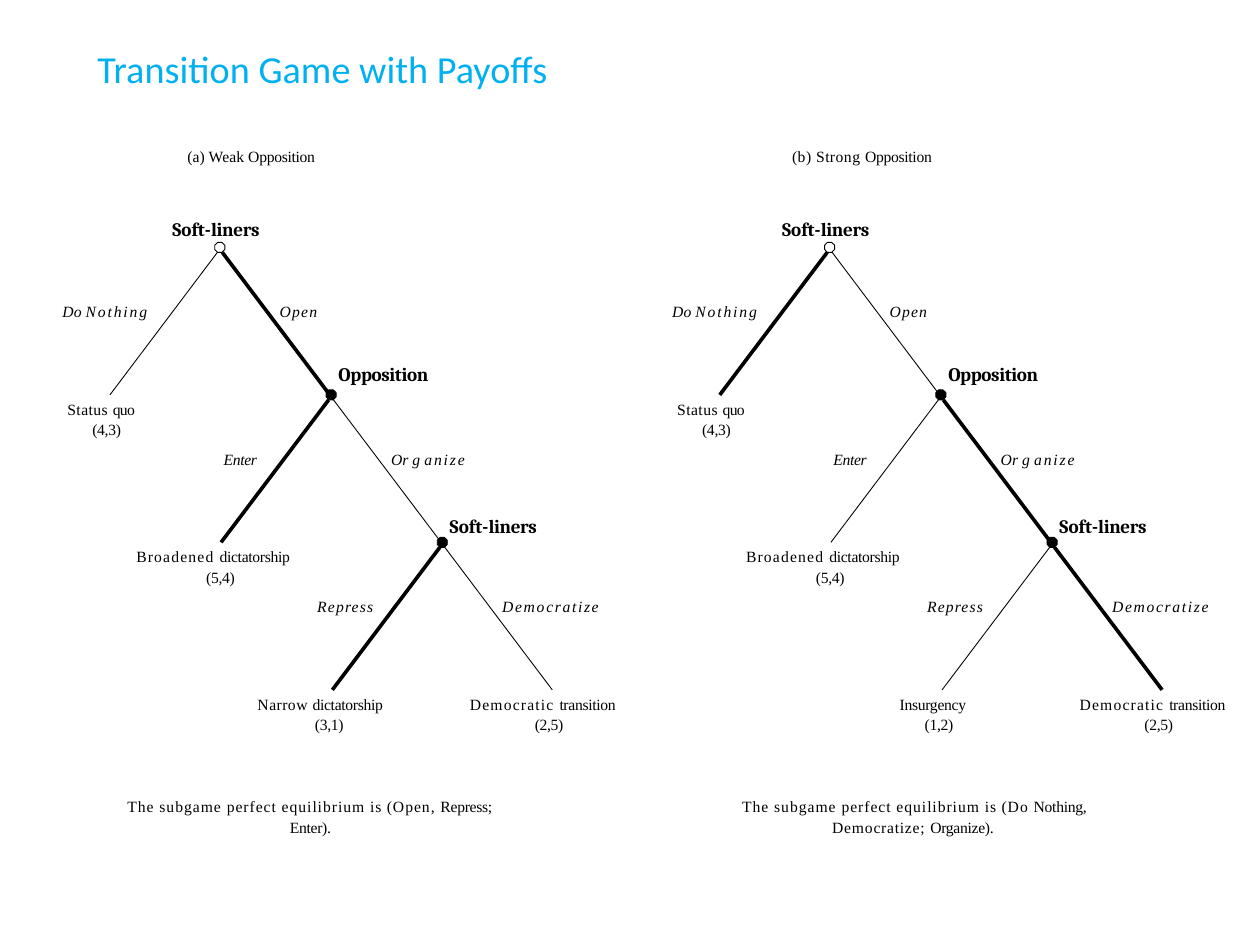
from collections import namedtuple
from dataclasses import dataclass

from lxml.etree import SubElement
from pptx import Presentation
from pptx.dml.color import RGBColor
from pptx.enum.shapes import MSO_CONNECTOR as Connector, MSO_SHAPE as Shape
from pptx.enum.text import MSO_ANCHOR as Anchor, MSO_AUTO_SIZE as AutoSize, PP_ALIGN as Align
from pptx.oxml.ns import qn
from pptx.util import Inches, Pt


@dataclass(frozen=True)
class Theme:
    ink: RGBColor = RGBColor(0, 0, 0)
    accent: RGBColor = RGBColor(0x00, 0xB0, 0xF0)
    thin: float = 0.25
    thick: float = 1.06


THEME = Theme()

# Text roles: font values, colour, space before (pt), line spacing
Role = namedtuple("Role", "font color before spacing")
SERIF = {"name": "Times New Roman", "size": Pt(4.5), "bold": False}
TITLE = Role({"name": "Calibri", "size": Pt(11), "bold": False}, THEME.accent, 0.9, 1)
CAPTION = Role(SERIF, THEME.ink, 1.1, 1)
ACTION = Role({**SERIF, "italic": True}, THEME.ink, 1.1, 1)
PLAYER = Role({"name": "Cambria", "size": Pt(5.5), "bold": True}, THEME.ink, 1, 1)
OUTCOME = Role(SERIF, THEME.ink, 0.9, 1.11)

# Slide size in points, then the grid in inches:
# each decision sits one column right and one row below the last
SLIDE_W, SLIDE_H = 363, 272.5
ROOT_X, ROOT_Y, LAST_X = 0.88, 0.99, 1.77
COL, ROW = (LAST_X - ROOT_X) / 2, 0.59
REACH = 0.44
PANEL_STEP = 2.44
NODE = 0.04
LABEL_GAP, LABEL_DROP, LABEL_H = 0.23, 0.21, 0.1
PLAYER_H, OUTCOME_H = 0.12, 0.19

# Wording holds (text, letter spacing in pt) runs;
# lead is the distance from a branch end back to the left of its outcome
Label = namedtuple("Label", "runs width")
Outcome = namedtuple("Outcome", "runs width lead hang")
Move = namedtuple("Move", "action outcome")
Decision = namedtuple("Decision", "player shift rise left right")
Panel = namedtuple("Panel", "heading heading_x best ending ending_box")

SOFT_LINERS = Label([("Soft-", 0), ("liners", -0.1)], 0.4)
OPPOSITION = Label([("Opposition", -0.1)], 0.43)
STATUS_QUO = Outcome([("Status ", 0.1), ("quo ", -0.2), ("(4,3)", -0.1)], 0.33, 0.18, 0.1)
BROADENED = Outcome([("Broadened ", 0.3), ("dictatorship (5,4)", -0.1)], 0.71, 0.35, 0.28)
NARROW = Outcome([("Narrow ", 0.1), ("dictatorship (3,1)", -0.1)], 0.61, 0.31, 0.23)
INSURGENCY = Outcome([("Insurgency (1,2)", -0.1)], 0.35, 0.18, 0.1)
TRANSITION = Outcome([("Democratic ", 0.3), ("transition (2,5)", -0.1)], 0.66, 0.34, 0.26)


def game(repression):
    """Decisions in order of play; a move without outcome leads to the next one."""
    return [
        Decision(SOFT_LINERS, -0.2, 0.13,
                 Move(Label([("Do ", 0), ("Nothing", 0.5)], 0.4), STATUS_QUO),
                 Move(Label([("Open", 0.3)], 0.2), None)),
        Decision(OPPOSITION, 0.02, 0.14,
                 Move(Label([("Enter", -0.1)], 0.2), BROADENED),
                 Move(Label([("Or g ", 0), ("anize", 0.5)], 0.33), None)),
        Decision(SOFT_LINERS, 0.02, 0.12,
                 Move(Label([("Repress", 0.3)], 0.27), repression),
                 Move(Label([("Democratize", 0.45)], 0.44), TRANSITION)),
    ]


EQUILIBRIUM = [("The subgame perfect equilibrium ", 0.25), ("is ", 0.2)]
# best lists the equilibrium side of each decision: -1 left, 1 right
PANELS = [
    (Panel(Label([("(a) Weak ", 0), ("Opposition", -0.1)], 0.61), 0.74, (1, -1, -1),
           EQUILIBRIUM + [("(Open, ", 0.25), ("Repress; Enter).", -0.1)],
           (0.5, 1.52, 0.65)), NARROW),
    (Panel(Label([("(b) Strong ", 0.1), ("Opposition", -0.1)], 0.65), 0.72, (-1, 1, 1),
           EQUILIBRIUM + [("(Do ", 0.25), ("Nothing, ", -0.1),
                          ("Democratize; ", 0.2), ("Organize).", -0.1)],
           (0.52, 1.44, 0.36)), INSURGENCY),
]


def apply(target, formats):
    for name, value in formats.items():
        setattr(target, name, value)


def write(holder, runs, role, hang=0):
    frame = holder.text_frame
    apply(frame, {"word_wrap": True, "auto_size": AutoSize.SHAPE_TO_FIT_TEXT,
                  "vertical_anchor": Anchor.TOP, "margin_left": 0,
                  "margin_top": Inches(0.01), "margin_right": 0, "margin_bottom": 0})
    paragraph = frame.paragraphs[0]
    apply(paragraph, {"alignment": Align.LEFT, "space_before": Pt(role.before),
                      "line_spacing": role.spacing})
    indents = paragraph._p.get_or_add_pPr()
    indents.set("marL", str(Inches(hang + 0.01)))
    indents.set("indent", str(-Inches(hang)))
    for text, tracking in runs:
        run = paragraph.add_run()
        run.text = text
        apply(run.font, role.font)
        run.font.color.rgb = role.color
        run._r.get_or_add_rPr().set("spc", str(round(tracking * 100)))


def add_text(slide, box, runs, role, hang=0):
    write(slide.shapes.add_textbox(*map(Inches, box)), runs, role, hang)


def add_branch(slide, start, end, width):
    branch = slide.shapes.add_connector(Connector.STRAIGHT, *map(Inches, start + end))
    branch.line.color.rgb = THEME.ink
    branch.line.width = Pt(width)
    SubElement(branch._element.spPr, qn("a:effectLst"))


def add_node(slide, x, y, filled):
    node = slide.shapes.add_shape(
        Shape.OCTAGON, *map(Inches, (x - NODE / 2, y - NODE / 2, NODE, NODE)))
    node.shadow.inherit = False
    if filled:
        node.fill.solid()
        node.fill.fore_color.rgb = THEME.ink
    else:
        node.fill.background()
    node.line.color.rgb = THEME.ink
    node.line.width = Pt(THEME.thin)


def add_decision(slide, x, y, decision, best, filled):
    """One node with its player, its two branches and their outcomes."""
    add_node(slide, x, y, filled)
    player = decision.player
    add_text(slide, (x + decision.shift, y - decision.rise, player.width, PLAYER_H),
             player.runs, PLAYER)
    for side, move in ((-1, decision.left), (1, decision.right)):
        end_x, end_y = x + side * REACH, y + ROW
        add_branch(slide, (x + side * 0.01, y + NODE / 2), (end_x, end_y),
                   THEME.thick if side == best else THEME.thin)
        action = move.action
        label_x = x + LABEL_GAP if side > 0 else x - LABEL_GAP - 0.01 - action.width
        add_text(slide, (label_x, y + LABEL_DROP, action.width, LABEL_H), action.runs, ACTION)
        if move.outcome:
            outcome = move.outcome
            add_text(slide, (end_x - outcome.lead, end_y, outcome.width, OUTCOME_H),
                     outcome.runs, OUTCOME, outcome.hang)


def add_panel(slide, left, panel, repression):
    """A heading, a game tree and its equilibrium, placed from the panel's left."""
    heading = panel.heading
    add_text(slide, (left + panel.heading_x, 0.58, heading.width, LABEL_H),
             heading.runs, CAPTION)
    for step, (decision, best) in enumerate(zip(game(repression), panel.best)):
        add_decision(slide, left + ROOT_X + step * COL, ROOT_Y + step * ROW,
                     decision, best, filled=step > 0)
    ending_x, width, hang = panel.ending_box
    add_text(slide, (left + ending_x, 3.17, width, OUTCOME_H), panel.ending, OUTCOME, hang)


def add_title(slide, box):
    title = slide.shapes.title
    apply(title, dict(zip(("left", "top", "width", "height"), map(Inches, box))))
    write(title, [("Transition Game with Payoffs", 0)], TITLE)


def main():
    deck = Presentation()
    deck.slide_width = Pt(SLIDE_W)
    deck.slide_height = Pt(SLIDE_H)
    slide = deck.slides.add_slide(deck.slide_layouts[5])
    add_title(slide, (0.38, 0.17, 1.9, 0.2))
    for index, (panel, repression) in enumerate(PANELS):
        add_panel(slide, index * PANEL_STEP, panel, repression)
    deck.save("out.pptx")


if __name__ == "__main__":
    main()
